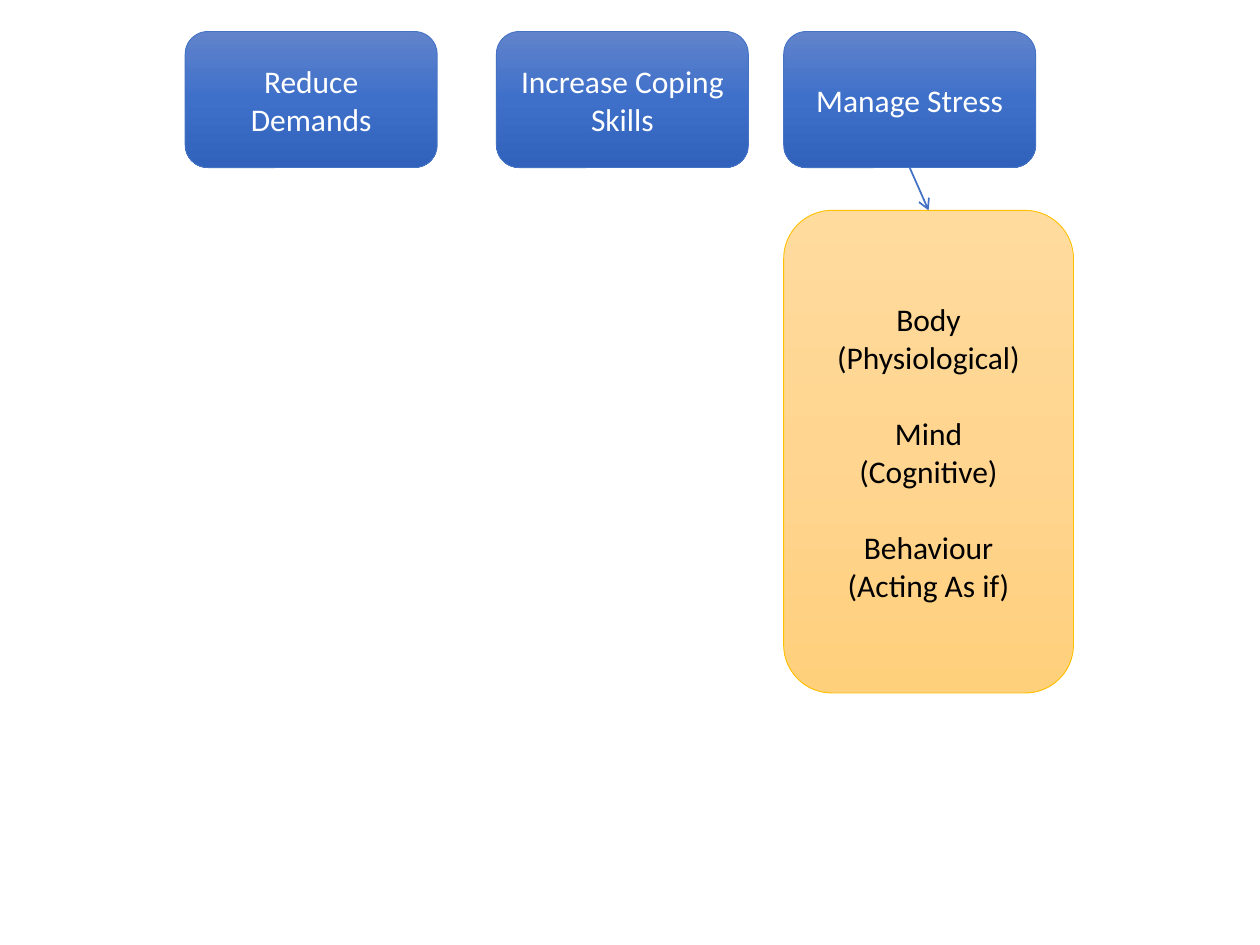
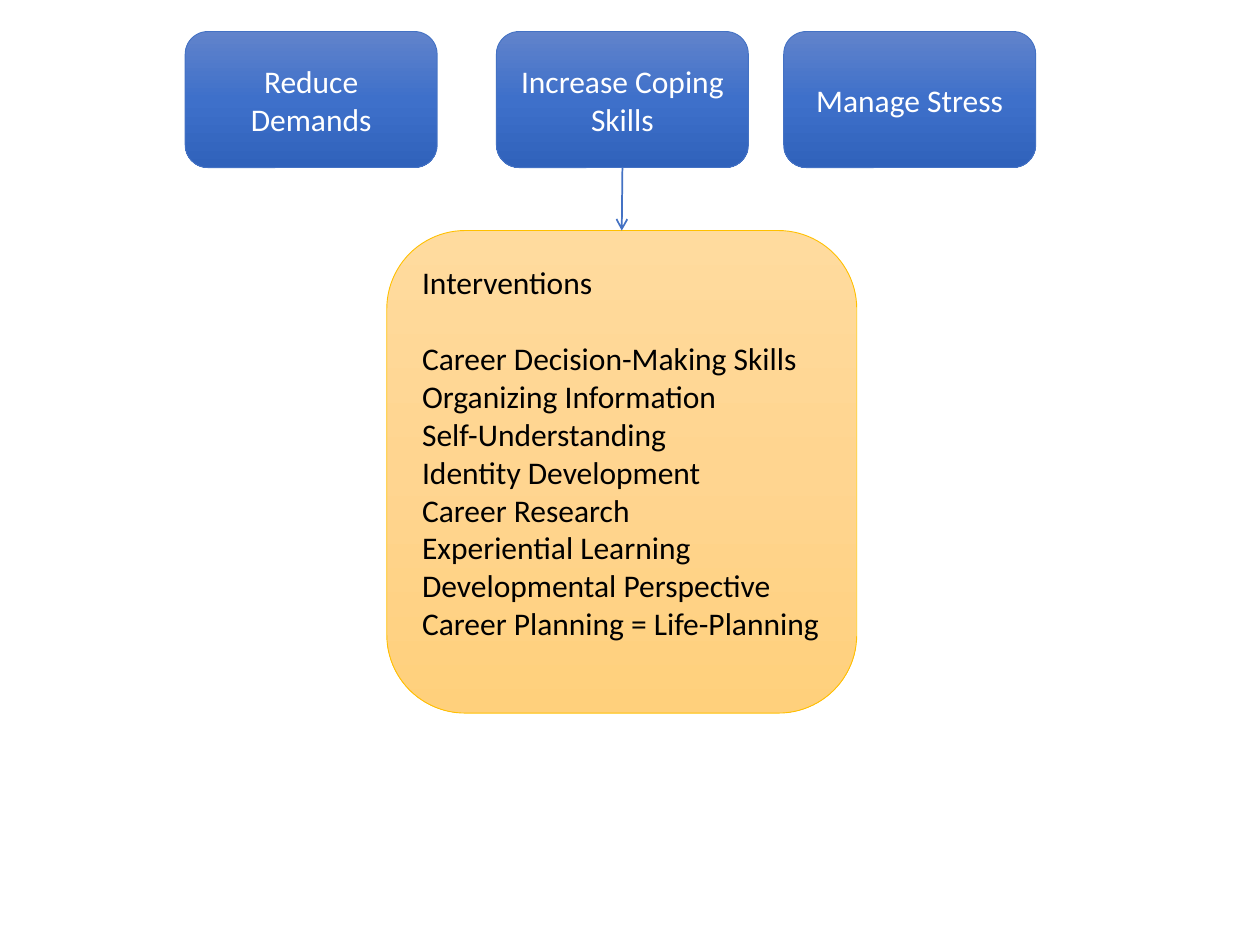
"""Build two slides that expand strategies for handling stress."""
from copy import deepcopy

from lxml import etree
from pptx import Presentation
from pptx.dml.color import RGBColor
from pptx.enum.shapes import MSO_CONNECTOR, MSO_SHAPE
from pptx.enum.text import MSO_ANCHOR, PP_ALIGN
from pptx.oxml.ns import qn
from pptx.util import Inches, Pt

ROUNDED = MSO_SHAPE.FLOWCHART_ALTERNATE_PROCESS
STRAIGHT = MSO_CONNECTOR.STRAIGHT
MIDDLE = MSO_ANCHOR.MIDDLE
CENTER, LEFT = PP_ALIGN.CENTER, PP_ALIGN.LEFT
TOP_SITE, BOTTOM_SITE = 0, 2

COLORS = {
    "blue_top": "6183CB", "blue_middle": "3E70CA", "blue_bottom": "3062BB",
    "blue_line": "4472C4",
    "gold_top": "FFDB9E", "gold_middle": "FFD590", "gold_bottom": "FFD07C",
    "gold_line": "FFC000",
    "white": "FFFFFF", "black": "000000",
}
STRATEGY_STYLE = {"palette": "blue", "text_color": "white", "alignment": CENTER}
DETAIL_STYLE = {"palette": "gold", "text_color": "black"}
FONT_SIZE = Pt(18)
LINE_HEIGHT = Pt(22)

STRATEGIES = {
    "Reduce Demands": 1.47,
    "Increase Coping Skills": 3.94,
    "Manage Stress": 6.22,
}
STRATEGY_TOP, STRATEGY_WIDTH, STRATEGY_HEIGHT = 0.25, 2, 1.08

STRESS_GROUPS = [
    ["Body (Physiological)"],
    ["Mind", "(Cognitive)"],
    ["Behaviour", "(Acting As if)"],
]
INTERVENTION_GROUPS = [
    ["Interventions"],
    [
        "Career Decision-Making Skills",
        "Organizing Information",
        "Self-Understanding",
        "Identity Development",
        "Career Research",
        "Experiential Learning",
        "Developmental Perspective",
        "Career Planning = Life-Planning",
    ],
]


def color(name):
    """Return the named colour."""
    return RGBColor.from_string(COLORS[name])


def set_attributes(target, **values):
    """Set each given value on the target."""
    for name, value in values.items():
        setattr(target, name, value)


def fill_gradient(shape, palette):
    """Fill a shape from top to bottom with the three tones of a palette."""
    shape.fill.gradient()
    shape.fill.gradient_angle = 270
    stop_list = shape.element.spPr.find(".//" + qn("a:gsLst"))
    stop_list.insert(1, deepcopy(stop_list[0]))
    tones = ("top", "middle", "bottom")
    for index, (stop, tone) in enumerate(zip(shape.fill.gradient_stops, tones)):
        stop.position = index / 2
        stop.color.rgb = color(f"{palette}_{tone}")


def add_box(slide, box, groups, palette, text_color, alignment):
    """Add a rounded box whose groups of lines stand one line apart."""
    shape = slide.shapes.add_shape(ROUNDED, *map(Inches, box))
    shape.shadow.inherit = False
    fill_gradient(shape, palette)
    shape.line.color.rgb = color(f"{palette}_line")
    shape.line.width = Pt(0.5)
    frame = shape.text_frame
    set_attributes(frame, word_wrap=True, vertical_anchor=MIDDLE)
    lines = [(text, group_index > 0 and line_index == 0)
             for group_index, group in enumerate(groups)
             for line_index, text in enumerate(group)]
    for index, (text, starts_group) in enumerate(lines):
        paragraph = frame.add_paragraph() if index else frame.paragraphs[0]
        set_attributes(paragraph, alignment=alignment,
                       space_before=LINE_HEIGHT if starts_group else Pt(0))
        run = paragraph.add_run()
        run.text = text
        set_attributes(run.font, name="Calibri", size=FONT_SIZE)
        run.font.color.rgb = color(text_color)
    return shape


def add_strategies(slide):
    """Add the row of strategy boxes and return them by name."""
    return {
        name: add_box(slide, (left, STRATEGY_TOP, STRATEGY_WIDTH, STRATEGY_HEIGHT),
                      [[name]], **STRATEGY_STYLE)
        for name, left in STRATEGIES.items()
    }


def add_arrow(slide, upper, lower):
    """Join the bottom of one box to the top of another with an arrow."""
    connector = slide.shapes.add_connector(STRAIGHT, 0, 0, 0, 0)
    connector.begin_connect(upper, BOTTOM_SITE)
    connector.end_connect(lower, TOP_SITE)
    connector.line.color.rgb = color("blue_line")
    connector.line.width = Pt(1)
    properties = connector.element.spPr
    etree.SubElement(properties.find(qn("a:ln")), qn("a:tailEnd"), type="arrow")
    etree.SubElement(properties, qn("a:effectLst"))


def add_strategy_slide(presentation, strategy, box, groups, alignment):
    """Add a slide that expands one strategy and return its detail box."""
    slide = presentation.slides.add_slide(presentation.slide_layouts[6])
    strategies = add_strategies(slide)
    detail = add_box(slide, box, groups, alignment=alignment, **DETAIL_STYLE)
    add_arrow(slide, strategies[strategy], detail)
    return detail


def main():
    """Build and save the presentation."""
    presentation = Presentation()
    set_attributes(presentation, slide_width=Inches(10), slide_height=Inches(7.5))
    add_strategy_slide(presentation, "Manage Stress", (6.22, 1.67, 2.3, 3.83),
                       STRESS_GROUPS, CENTER)
    interventions = add_strategy_slide(
        presentation, "Increase Coping Skills", (3.07, 1.83, 3.73, 3.83),
        INTERVENTION_GROUPS, LEFT)
    interventions.text_frame.margin_bottom = Inches(0.05) + LINE_HEIGHT
    presentation.save("out.pptx")


if __name__ == "__main__":
    main()
